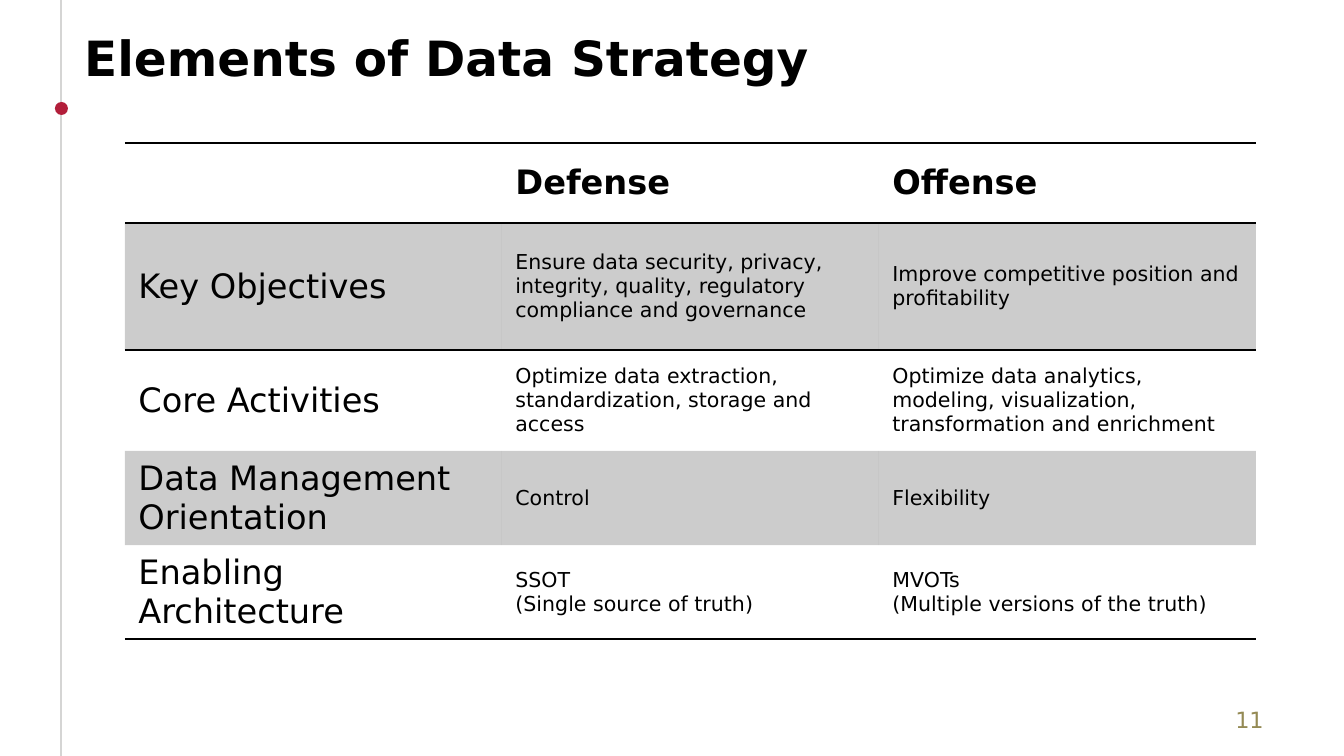
from lxml import etree
from pptx import Presentation
from pptx import util as u
from pptx.dml import color
from pptx.enum import shapes, text
from pptx.oxml import ns

SCALE = 914400 / 134.4
FONT = "DejaVu Sans"
BLACK = "000000"


def px(*lengths):
    return [u.Emu(round(length * SCALE)) for length in lengths]


def rgb(value):
    return color.RGBColor.from_string(value)


deck = Presentation()
deck.slide_width, deck.slide_height = px(1344, 756)
page = deck.slides.add_slide(deck.slide_layouts[6])

rail = page.shapes.add_connector(shapes.MSO_CONNECTOR.STRAIGHT, *px(61, 0, 61, 756))
rail.line.color.rgb = rgb("D5D5D4")
rail.line.width = u.Pt(1.5)
etree.SubElement(rail._element.spPr, ns.qn("a:effectLst"))

dot = page.shapes.add_shape(shapes.MSO_SHAPE.OVAL, *px(55, 102, 13, 13))
dot.shadow.inherit = False
dot.fill.solid()
dot.fill.fore_color.rgb = rgb("B21E3A")
dot.line.fill.background()

labels = [
    ("Elements of Data Strategy", (71, 12, 1254, 81), 26, True, BLACK,
     text.MSO_ANCHOR.BOTTOM, text.PP_ALIGN.LEFT),
    ("11", (964, 700, 313, 40), 12, False, "948A54",
     text.MSO_ANCHOR.MIDDLE, text.PP_ALIGN.RIGHT),
]
for wording, place, size, bold, ink, anchor, align in labels:
    box = page.shapes.add_textbox(*px(*place))
    box.text_frame.word_wrap = True
    box.text_frame.vertical_anchor = anchor
    para = box.text_frame.paragraphs[0]
    para.text = wording
    para.alignment = align
    para.font.name = FONT
    para.font.size = u.Pt(size)
    para.font.bold = bold
    para.font.color.rgb = rgb(ink)

rows = [
    ("", "Defense", "Offense"),
    ("Key Objectives",
     "Ensure data security, privacy, integrity, quality, regulatory compliance and governance",
     "Improve competitive position and profitability"),
    ("Core Activities",
     "Optimize data extraction, standardization, storage and access",
     "Optimize data analytics, modeling, visualization, transformation and enrichment"),
    ("Data Management Orientation", "Control", "Flexibility"),
    ("Enabling Architecture",
     "SSOT\n(Single source of truth)",
     "MVOTs\n(Multiple versions of the truth)"),
]
heights = px(80, 127, 101, 92, 92)
ruled_edges = {0: ("a:lnT", "a:lnB"), 1: ("a:lnT",), 4: ("a:lnB",)}

frame = page.shapes.add_table(len(rows), 3, *px(125, 143, 1131, 492))
table = frame.table
table.first_row = False
table.horz_banding = False
style = table._tbl.tblPr.find(ns.qn("a:tableStyleId"))
style.text = "{2D5ABB26-0587-4C30-8999-92F81FD0307C}"
for column in table.columns:
    column.width = px(377)[0]

for row_index, wordings in enumerate(rows):
    table.rows[row_index].height = heights[row_index]
    for column_index, wording in enumerate(wordings):
        cell = table.cell(row_index, column_index)
        cell.vertical_anchor = text.MSO_ANCHOR.MIDDLE
        para = cell.text_frame.paragraphs[0]
        para.text = wording
        heading = row_index == 0 or column_index == 0
        para.font.name = FONT
        para.font.size = u.Pt(18 if heading else 11)
        para.font.bold = row_index == 0
        para.font.color.rgb = rgb(BLACK)

        properties = cell._tc.get_or_add_tcPr()
        for edge in ruled_edges.get(row_index, ()):
            border = etree.SubElement(properties, ns.qn(edge), w=str(u.Pt(1)))
            paint = etree.SubElement(border, ns.qn("a:solidFill"))
            etree.SubElement(paint, ns.qn("a:srgbClr"), val=BLACK)
        if row_index % 2:
            cell.fill.solid()
            cell.fill.fore_color.rgb = rgb(BLACK)
            tint = properties.find(ns.qn("a:solidFill")).find(ns.qn("a:srgbClr"))
            etree.SubElement(tint, ns.qn("a:alpha"), val="20000")
        else:
            cell.fill.background()

deck.save("out.pptx")
